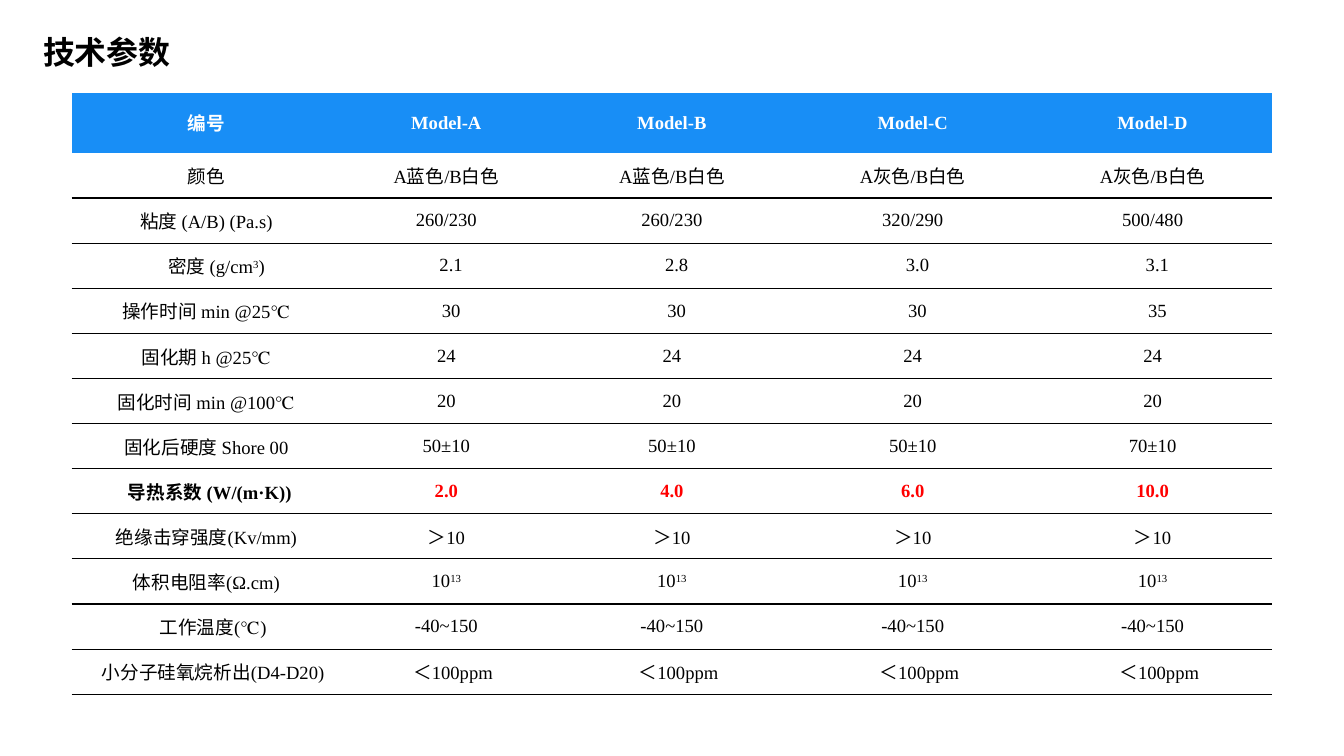
from lxml import etree
from pptx import Presentation, util as u
from pptx.dml.color import RGBColor
from pptx.enum import text as t
from pptx.oxml import ns

HUES = {"head": "188EF6", "ink": "000000", "paper": "FFFFFF", "key": "FF0000"}
LATIN, HAN = "Times New Roman", "Noto Sans CJK SC"

COLS = [20.06, 15.65, 17.92, 17.92, 17.78]
HEAD, ROW = 7.96, 5.97
NAMES = ["编号", "Model-A", "Model-B", "Model-C", "Model-D"]
KEY = "导热系数 (W/(m·K))"
SPECS = {
    "颜色": ["A蓝色/B白色"] * 2 + ["A灰色/B白色"] * 2,
    "粘度 (A/B) (Pa.s)": ["260/230", "260/230", "320/290", "500/480"],
    "密度 (g/cm^3^)": ["2.1", "2.8", "3.0", "3.1"],
    "操作时间 min @25℃": ["30", "30", "30", "35"],
    "固化期 h @25℃": ["24"] * 4,
    "固化时间 min @100℃": ["20"] * 4,
    "固化后硬度 Shore 00": ["50±10"] * 3 + ["70±10"],
    KEY: ["2.0", "4.0", "6.0", "10.0"],
    "绝缘击穿强度(Kv/mm)": ["＞10"] * 4,
    "体积电阻率(Ω.cm)": ["10^13"] * 4,
    "工作温度(℃)": ["-40~150"] * 4,
    "小分子硅氧烷析出(D4-D20)": ["＜100ppm"] * 4,
}
LABEL_INDENT = {"密度 (g/cm^3^)": 0.21, KEY: 0.07, "工作温度(℃)": 0.14,
                "小分子硅氧烷析出(D4-D20)": 0.14}
VALUE_INDENT = {"密度 (g/cm^3^)": 0.1, "操作时间 min @25℃": 0.1,
                "小分子硅氧烷析出(D4-D20)": 0.14}


def write(frame, words, size=14, face=LATIN, hue="ink", bold=False,
          align=t.PP_ALIGN.CENTER, indent=0):
    para = frame.paragraphs[0]
    para.alignment = align
    if indent:
        para._p.get_or_add_pPr().set("marL", str(u.Inches(indent)))
    for i, part in enumerate(words.split("^")):
        run = para.add_run()
        run.text = part
        font = run.font
        font.size, font.name, font.bold = u.Pt(size), face, bold
        font.color.rgb = RGBColor.from_string(HUES[hue])
        props = run._r.get_or_add_rPr()
        etree.SubElement(props, ns.qn("a:ea"), typeface=HAN)
        if i % 2:
            props.set("baseline", "30000")


class Deck:
    def __init__(self, wide, high):
        self.show = Presentation()
        self.show.slide_width = u.Inches(wide)
        self.show.slide_height = u.Inches(high)
        self.slide = self.show.slides.add_slide(self.show.slide_layouts[5])

    def x(self, share):
        return round(self.show.slide_width * share / 100)

    def y(self, share):
        return round(self.show.slide_height * share / 100)

    def title(self, words, left, top, wide, high):
        box = self.slide.shapes.title
        box.left, box.top = self.x(left), self.y(top)
        box.width, box.height = self.x(wide), self.y(high)
        frame = box.text_frame
        frame.word_wrap = False
        frame.auto_size = t.MSO_AUTO_SIZE.NONE
        frame.vertical_anchor = t.MSO_ANCHOR.MIDDLE
        write(frame, words, size=24, face=HAN, bold=True, align=t.PP_ALIGN.LEFT)

    def table(self, left, top, cols, rows):
        grid = self.slide.shapes.add_table(
            len(rows), len(cols), self.x(left), self.y(top),
            self.x(sum(cols)), self.y(sum(rows))).table
        grid.first_row = grid.horz_banding = False
        for col, wide in zip(grid.columns, cols):
            col.width = self.x(wide)
        for row, high in zip(grid.rows, rows):
            row.height = self.y(high)
        return grid

    def cell(self, cell, words, fill=None, pad=0, lines="", **style):
        cell.vertical_anchor = t.MSO_ANCHOR.MIDDLE
        cell.margin_left = cell.margin_right = u.Inches(pad)
        cell.margin_top = cell.margin_bottom = u.Inches(pad / 2)
        props = cell._tc.get_or_add_tcPr()
        for side in "LRTB":
            edge = etree.SubElement(props, ns.qn("a:ln" + side), w=str(u.Pt(1)))
            if side in lines:
                solid = etree.SubElement(edge, ns.qn("a:solidFill"))
                etree.SubElement(solid, ns.qn("a:srgbClr"), val=HUES["ink"])
            else:
                etree.SubElement(edge, ns.qn("a:noFill"))
        if fill:
            cell.fill.solid()
            cell.fill.fore_color.rgb = RGBColor.from_string(HUES[fill])
        else:
            cell.fill.background()
        write(cell.text_frame, words, **style)


def main():
    deck = Deck(14.06, 7.91)
    deck.title("技术参数", 2.49, 3.67, 11.1, 6.32)
    grid = deck.table(5.33, 12.26, COLS, [HEAD] + [ROW] * len(SPECS))
    for c, name in enumerate(NAMES):
        deck.cell(grid.cell(0, c), name, fill="head", pad=0 if c > 1 else 0.1,
                  hue="paper", bold=True)
    for r, (label, values) in enumerate(SPECS.items(), 1):
        lines = "B" if r == 1 else "TB"
        bold = label == KEY
        deck.cell(grid.cell(r, 0), label, pad=0.1, lines=lines, bold=bold,
                  indent=LABEL_INDENT.get(label, 0))
        for c, value in enumerate(values, 1):
            deck.cell(grid.cell(r, c), value, lines=lines, bold=bold,
                      hue="key" if bold else "ink",
                      indent=VALUE_INDENT.get(label, 0))
    deck.show.save("out.pptx")


if __name__ == "__main__":
    main()
